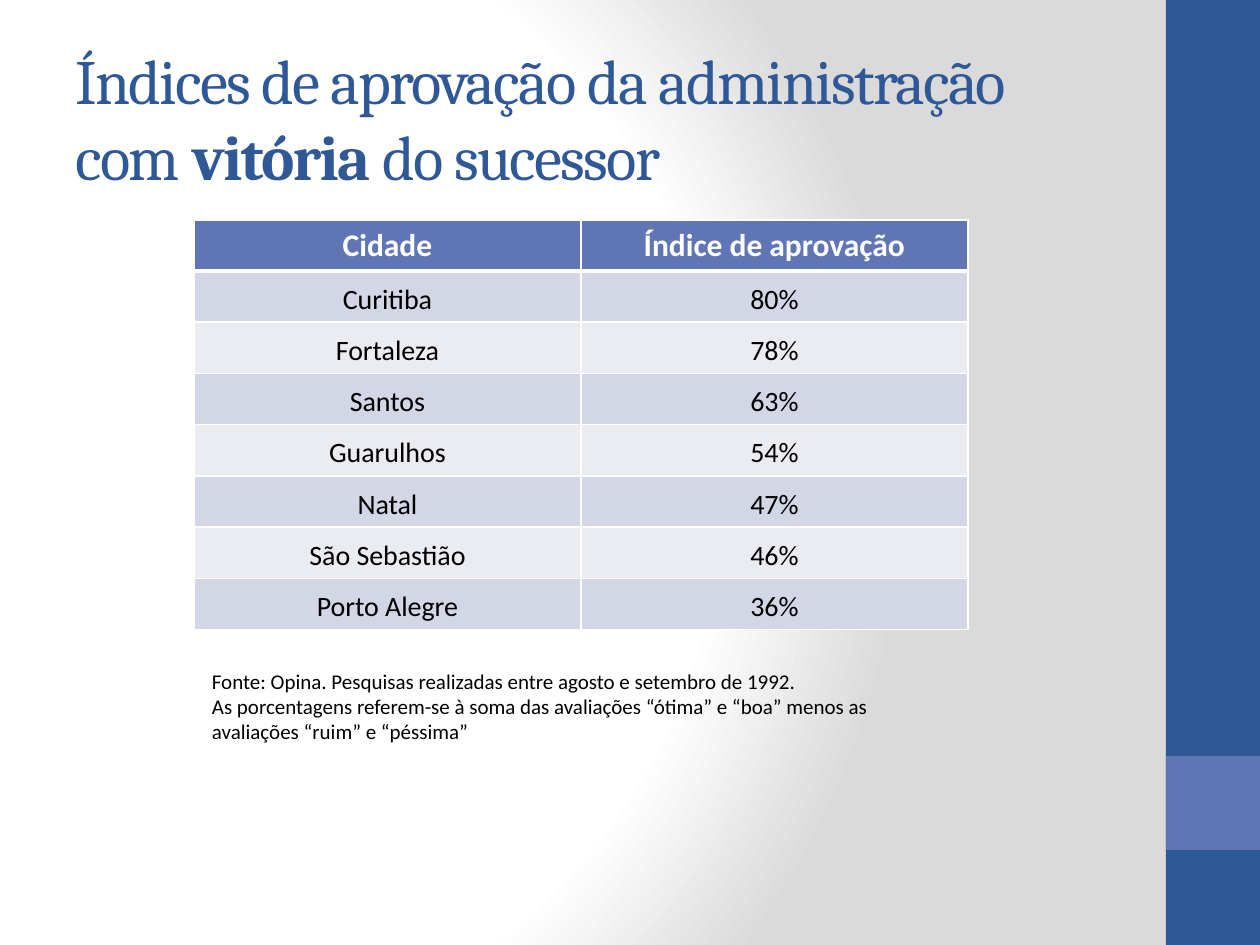
from pptx import Presentation
from pptx.dml.color import RGBColor
from pptx.enum.shapes import MSO_SHAPE
from pptx.enum.text import MSO_ANCHOR, PP_ALIGN
from pptx.oxml import parse_xml
from pptx.oxml.ns import nsdecls, qn
from pptx.util import Emu, Pt

PX_PER_INCH = 126

BLUE = RGBColor(0x2F, 0x58, 0x97)
PERIWINKLE = RGBColor(0x60, 0x76, 0xB4)
BAND_DARK = RGBColor(0xD2, 0xD6, 0xE5)
BAND_LIGHT = RGBColor(0xEA, 0xEC, 0xF2)
WHITE = RGBColor(0xFF, 0xFF, 0xFF)
GREY = RGBColor(0xDA, 0xDA, 0xDA)
BLACK = RGBColor(0, 0, 0)

HEADER = ("Cidade", "Índice de aprovação")
APPROVAL = [
    ("Curitiba", "80%"),
    ("Fortaleza", "78%"),
    ("Santos", "63%"),
    ("Guarulhos", "54%"),
    ("Natal", "47%"),
    ("São Sebastião", "46%"),
    ("Porto Alegre", "36%"),
]
TITLE = [
    ("Índices de aprovação da administração com ", False),
    ("vitória", True),
    (" do sucessor", False),
]
# \v is a line break within the paragraph
SOURCE_NOTE = (
    "Fonte: Opina. Pesquisas realizadas entre agosto e setembro de 1992.\v"
    "As porcentagens referem-se à soma das avaliações “ótima” e “boa” "
    "menos as avaliações “ruim” e “péssima”"
)


def px(length):
    return Emu(round(length * 914400 / PX_PER_INCH))


def set_font(paragraph, name, size, color, bold=None):
    font = paragraph.font
    font.name, font.size, font.bold = name, Pt(size), bold
    font.color.rgb = color


def set_background(slide):
    slide.background.fill.solid()
    properties = slide.element.find(".//" + qn("p:bgPr"))
    stops = "".join(
        f'<a:gs pos="{position * 1000}"><a:srgbClr val="{color}"/></a:gs>'
        for position, color in ((0, WHITE), (75, WHITE), (100, GREY))
    )
    gradient = parse_xml(
        f'<a:gradFill {nsdecls("a")} rotWithShape="1"><a:gsLst>{stops}</a:gsLst>'
        '<a:path path="circle">'
        '<a:fillToRect l="20000" t="50000" r="100000" b="50000"/>'
        "</a:path></a:gradFill>"
    )
    properties.replace(properties.find(qn("a:solidFill")), gradient)


def add_block(slide, left, top, width, height, color):
    block = slide.shapes.add_shape(
        MSO_SHAPE.RECTANGLE, px(left), px(top), px(width), px(height))
    block.shadow.inherit = False
    block.fill.solid()
    block.fill.fore_color.rgb = color
    block.line.fill.background()


def add_text_frame(slide, left, top, width, height):
    frame = slide.shapes.add_textbox(
        px(left), px(top), px(width), px(height)).text_frame
    frame.word_wrap = True
    return frame


def add_title(slide):
    frame = add_text_frame(slide, 63, 38, 1050, 158)
    frame.vertical_anchor = MSO_ANCHOR.MIDDLE
    heading = frame.paragraphs[0]
    set_font(heading, "Cambria", 36, BLUE)
    for text, bold in TITLE:
        run = heading.add_run()
        run.text = text
        run.font.bold = bold
        run.font._element.set("spc", "-100")  # tightened by 1 pt


def set_borders(cell, top=1, bottom=1):
    properties = cell._tc.get_or_add_tcPr()
    for side, points in (("L", 1), ("R", 1), ("T", top), ("B", bottom)):
        properties.append(parse_xml(
            f'<a:ln{side} {nsdecls("a")} w="{Pt(points)}"><a:solidFill>'
            f'<a:srgbClr val="{WHITE}"/></a:solidFill></a:ln{side}>'))


def fill_cell(cell, text, fill):
    cell.fill.solid()
    cell.fill.fore_color.rgb = fill
    cell.text = text
    paragraph = cell.text_frame.paragraphs[0]
    paragraph.alignment = PP_ALIGN.CENTER
    return paragraph


def add_approval_table(slide):
    row_count = len(APPROVAL) + 1
    table = slide.shapes.add_table(
        row_count, len(HEADER), px(194), px(220), px(774), px(51 * row_count)).table

    # Header row, with a thick rule below
    for cell, text in zip(table.rows[0].cells, HEADER):
        set_borders(cell, bottom=3)
        set_font(fill_cell(cell, text, PERIWINKLE), "Calibri", 18, WHITE, True)

    # Banded city rows
    for index, city in enumerate(APPROVAL, start=1):
        band = BAND_DARK if index % 2 else BAND_LIGHT
        for cell, text in zip(table.rows[index].cells, city):
            set_borders(cell, top=3 if index == 1 else 1)
            paragraph = fill_cell(cell, text, band)
            paragraph.line_spacing = 1.15
            set_font(paragraph, "Calibri", 16, BLACK, False)


def add_source_note(slide):
    frame = add_text_frame(slide, 184, 662, 784, 123)
    frame.margin_left = px(28)
    frame.text = SOURCE_NOTE
    set_font(frame.paragraphs[0], "Calibri", 12, BLACK)


def main():
    deck = Presentation()
    deck.slide_width, deck.slide_height = px(1260), px(945)
    slide = deck.slides.add_slide(deck.slide_layouts[6])

    set_background(slide)
    # Side bar and its accent square
    add_block(slide, 1166, 0, 94, 945, BLUE)
    add_block(slide, 1166, 756, 94, 94, PERIWINKLE)
    add_title(slide)
    add_approval_table(slide)
    add_source_note(slide)

    deck.save("out.pptx")


if __name__ == "__main__":
    main()
